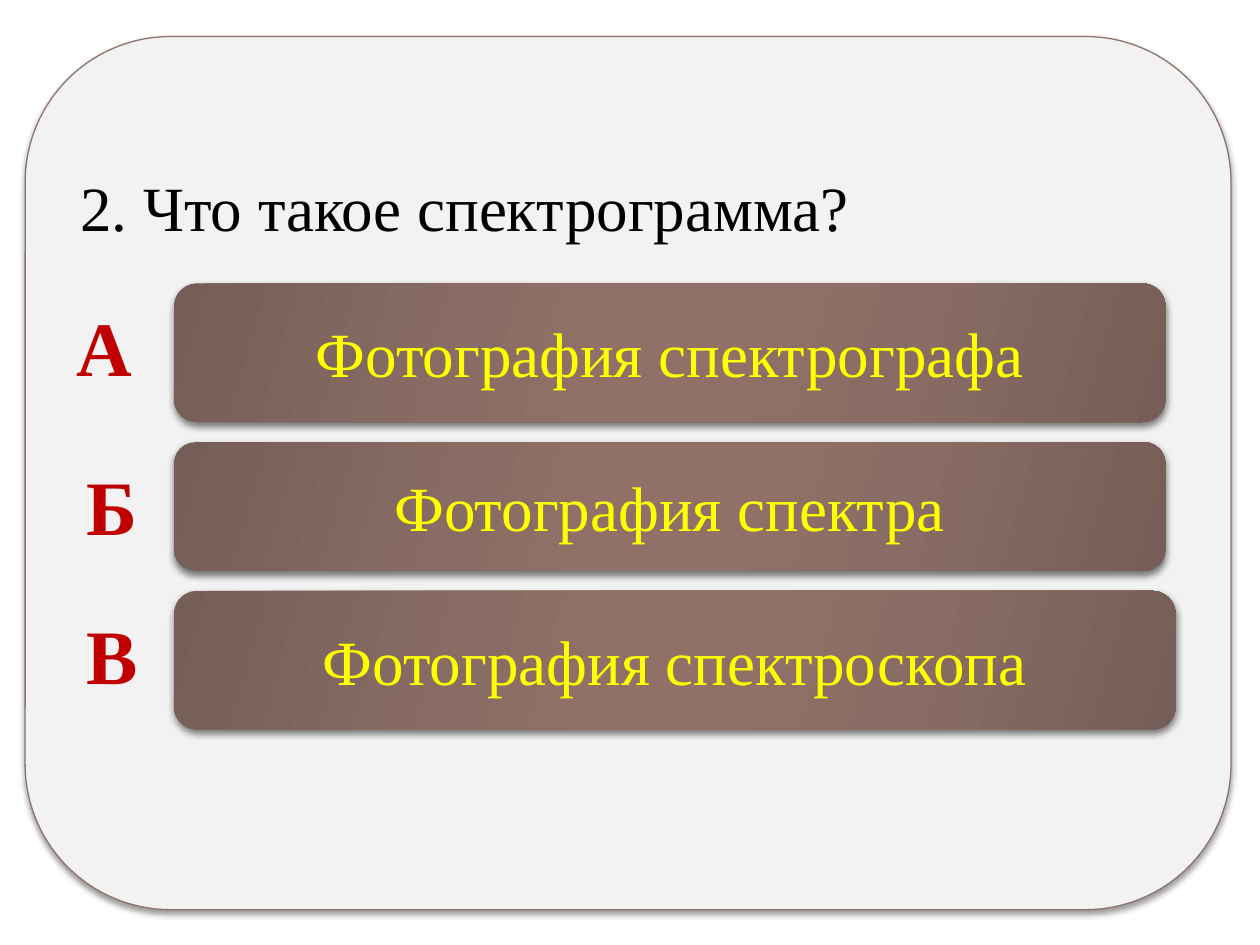
import pptx
import pptx.util
import pptx.dml.color
import pptx.enum.shapes
import pptx.enum.text
import pptx.oxml
import pptx.oxml.ns

Inches = pptx.util.Inches
Pt = pptx.util.Pt
RGBColor = pptx.dml.color.RGBColor
Anchor = pptx.enum.text.MSO_ANCHOR
Align = pptx.enum.text.PP_ALIGN

FONT = "Times New Roman"
BLACK = RGBColor(0, 0, 0)
YELLOW = RGBColor(0xFF, 0xFF, 0x00)
RED = RGBColor(0xC0, 0x00, 0x00)
PANEL_FILL = RGBColor(0xF2, 0xF2, 0xF2)
PANEL_LINE = RGBColor(0x8E, 0x73, 0x6A)
EDGE_BROWN = RGBColor(0x74, 0x5E, 0x57)
MIDDLE_BROWN = RGBColor(0x89, 0x6D, 0x64)
CENTER_BROWN = RGBColor(0x91, 0x71, 0x67)
GRADIENT = [(0, EDGE_BROWN), (30, MIDDLE_BROWN), (45, CENTER_BROWN),
            (55, CENTER_BROWN), (73, MIDDLE_BROWN), (100, EDGE_BROWN)]

ANSWERS = [
    ("А", "Фотография спектрографа", (0.51, 2.33), (1.38, 2.25, 7.87, 1.1)),
    ("Б", "Фотография спектра", (0.59, 3.59), (1.38, 3.51, 7.87, 1.02)),
    ("В", "Фотография спектроскопа", (0.59, 4.77), (1.38, 4.69, 7.95, 1.1)),
]


def write_text(shape, text, size=36, color=BLACK, bold=False,
               align=Align.LEFT, anchor=Anchor.TOP):
    frame = shape.text_frame
    frame.word_wrap = True
    frame.vertical_anchor = anchor
    paragraph = frame.paragraphs[0]
    paragraph.alignment = align
    run = paragraph.add_run()
    run.text = text
    run.font.name = FONT
    run.font.size = Pt(size)
    run.font.bold = bold
    run.font.color.rgb = color


def add_shadow(shape, opacity, blur):
    shape.shadow.inherit = False
    effects = shape._element.spPr.find(pptx.oxml.ns.qn("a:effectLst"))
    effects.append(pptx.oxml.parse_xml(
        f'<a:outerShdw {pptx.oxml.ns.nsdecls("a")} blurRad="{Pt(blur)}" '
        f'dist="{Pt(2)}" dir="5400000" rotWithShape="0"><a:srgbClr val="000000">'
        f'<a:alpha val="{opacity * 1000}"/></a:srgbClr></a:outerShdw>'))


def fill_gradient(shape, stops, clockwise_angle):
    shape.fill.gradient()
    shape.fill.gradient_angle = 360 - clockwise_angle
    stop_list = shape._element.spPr.find(".//" + pptx.oxml.ns.qn("a:gsLst"))
    for stop in list(stop_list):
        stop_list.remove(stop)
    for position, color in stops:
        stop_list.append(pptx.oxml.parse_xml(
            f'<a:gs {pptx.oxml.ns.nsdecls("a")} pos="{position * 1000}">'
            f'<a:srgbClr val="{color}"/></a:gs>'))


def add_rounded_box(slide, box):
    return slide.shapes.add_shape(
        pptx.enum.shapes.MSO_SHAPE.ROUNDED_RECTANGLE, *map(Inches, box))


def add_question_panel(slide, box, question):
    panel = add_rounded_box(slide, box)
    panel.fill.solid()
    panel.fill.fore_color.rgb = PANEL_FILL
    panel.line.color.rgb = PANEL_LINE
    panel.line.width = Pt(0.75)
    add_shadow(panel, opacity=40, blur=3)
    panel.text_frame.margin_top = Inches(0.71)
    write_text(panel, question, align=Align.JUSTIFY)


def add_answer(slide, box, answer):
    button = add_rounded_box(slide, box)
    fill_gradient(button, GRADIENT, clockwise_angle=16)
    button.line.fill.background()
    add_shadow(button, opacity=50, blur=4)
    write_text(button, answer, color=YELLOW, align=Align.CENTER, anchor=Anchor.MIDDLE)


def add_letter(slide, position, letter):
    label = slide.shapes.add_textbox(*map(Inches, (*position, 0.59, 0.84)))
    write_text(label, letter, size=44, color=RED, bold=True)
    label.text_frame.auto_size = pptx.enum.text.MSO_AUTO_SIZE.SHAPE_TO_FIT_TEXT


def main():
    presentation = pptx.Presentation()
    presentation.slide_width = Inches(10)
    presentation.slide_height = Inches(7.5)
    slide = presentation.slides.add_slide(presentation.slide_layouts[6])
    add_question_panel(slide, (0.2, 0.29, 9.57, 6.93), "2. Что такое спектрограмма?")
    for letter, answer, position, box in ANSWERS:
        add_answer(slide, box, answer)
        add_letter(slide, position, letter)
    presentation.save("out.pptx")


if __name__ == "__main__":
    main()
